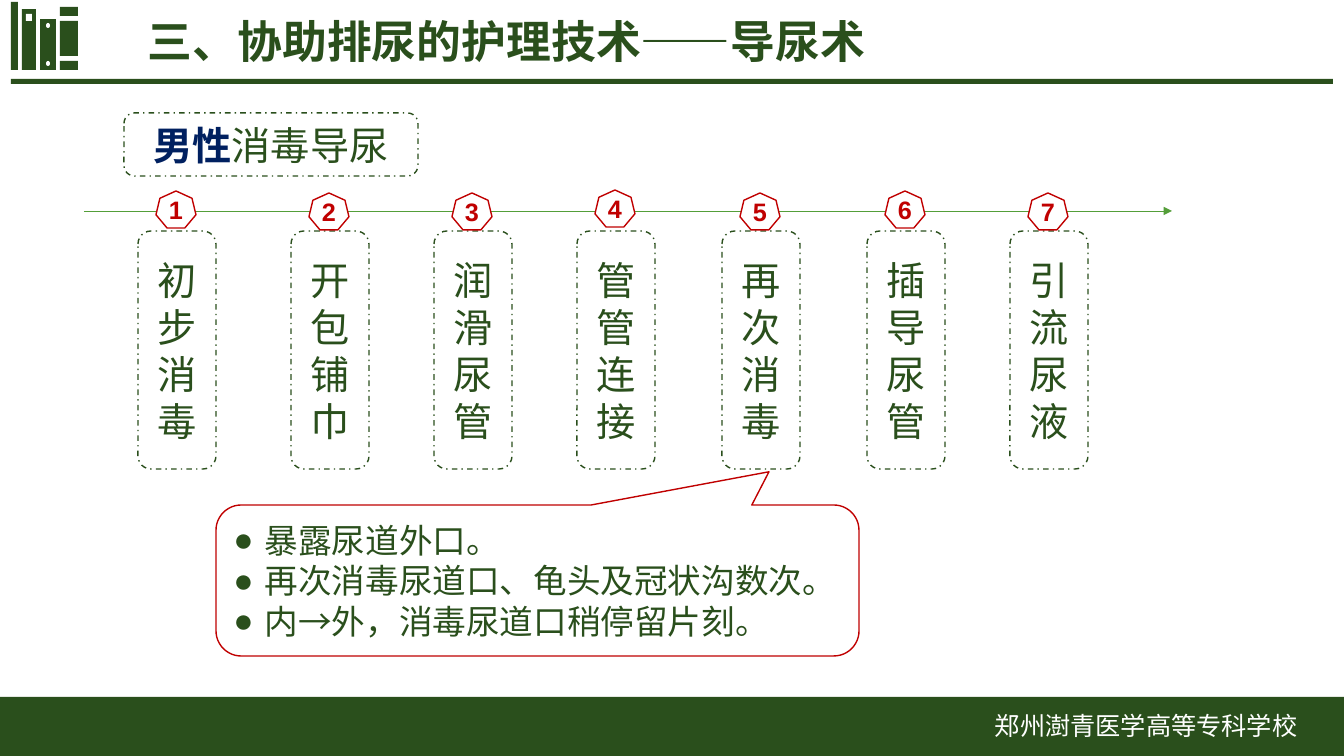
import pptx
import pptx.dml.color
import pptx.enum.dml
import pptx.enum.shapes
import pptx.enum.text
import pptx.oxml
import pptx.oxml.ns
import pptx.util

SHAPE = pptx.enum.shapes.MSO_SHAPE
ALIGN = pptx.enum.text.PP_ALIGN
DASH_DOT = pptx.enum.dml.MSO_LINE.DASH_DOT
EMU_PER_PX = 12192000 / 1344
COLORS = {"green": "2A4F1C", "arrow": "549E39", "red": "C00000",
          "navy": "002060", "white": "FFFFFF"}
CJK = "Noto Sans CJK SC"


def px(n):
    return pptx.util.Emu(round(n * EMU_PER_PX))


def rgb(name):
    return pptx.dml.color.RGBColor.from_string(COLORS[name])


def append_xml(parent, tag, **attrs):
    el = pptx.oxml.parse_xml(f"<a:{tag} {pptx.oxml.ns.nsdecls('a')}/>")
    for key, value in attrs.items():
        el.set(key, value)
    parent.append(el)


def add_text(p, text, size=28, color="green", bold=False, font="Arial"):
    r = p.add_run()
    r.text = text
    r.font.size = pptx.util.Pt(size)
    r.font.bold = bold
    r.font.name = font
    r.font.color.rgb = rgb(color)
    if font == CJK:
        append_xml(r._r.get_or_add_rPr(), "ea", typeface=font)


class Deck:
    def __init__(self):
        self.prs = pptx.Presentation()
        self.prs.slide_width, self.prs.slide_height = px(1344), px(756)
        self.slide = self.prs.slides.add_slide(self.prs.slide_layouts[6])

    def shape(self, kind, x, y, w, h, fill=None, line=None, dash=None):
        sp = self.slide.shapes.add_shape(kind, px(x), px(y), px(w), px(h))
        sp.shadow.inherit = False
        if fill:
            sp.fill.solid()
            sp.fill.fore_color.rgb = rgb(fill)
        else:
            sp.fill.background()
        if line:
            sp.line.color.rgb = rgb(line)
            sp.line.width = pptx.util.Pt(1)
            sp.line.dash_style = dash
        else:
            sp.line.fill.background()
        sp.text_frame.word_wrap = True
        sp.text_frame.vertical_anchor = pptx.enum.text.MSO_ANCHOR.MIDDLE
        sp.text_frame.paragraphs[0].alignment = ALIGN.CENTER
        return sp

    def textbox(self, x, y, w, h, text, **fmt):
        tf = self.slide.shapes.add_textbox(px(x), px(y), px(w), px(h)).text_frame
        tf.word_wrap = True
        add_text(tf.paragraphs[0], text, font=CJK, **fmt)

    def dashed_box(self, x, y, w, h):
        """Add a dash-dot rounded box and return its paragraph."""
        sp = self.shape(SHAPE.ROUNDED_RECTANGLE, x, y, w, h, line="green", dash=DASH_DOT)
        return sp.text_frame.paragraphs[0]

    def arrow(self, x1, x2, y):
        cn = self.slide.shapes.add_connector(
            pptx.enum.shapes.MSO_CONNECTOR.STRAIGHT, px(x1), px(y), px(x2), px(y))
        cn.line.color.rgb = rgb("arrow")
        cn.line.width = pptx.util.Pt(0.5)
        append_xml(cn.line._get_or_add_ln(), "tailEnd", type="triangle")
        append_xml(cn._element.spPr, "effectLst")

    def step(self, number, label, x, badge_y):
        add_text(self.dashed_box(x, 231, 78, 238), label)
        sp = self.shape(SHAPE.HEPTAGON, x + 18, badge_y, 40, 37, fill="white", line="red")
        tf = sp.text_frame
        tf.margin_left = tf.margin_right = tf.margin_top = tf.margin_bottom = 0
        add_text(tf.paragraphs[0], str(number), size=18, color="red", bold=True)

    def callout(self, x, y, w, h, tip, items):
        sp = self.shape(SHAPE.ROUNDED_RECTANGULAR_CALLOUT, x, y, w, h, line="red")
        sp.adjustments[0], sp.adjustments[1] = tip
        tf = sp.text_frame
        for i, item in enumerate(items):
            p = tf.add_paragraph() if i else tf.paragraphs[0]
            p.alignment = ALIGN.LEFT
            pPr = p._p.get_or_add_pPr()
            pPr.set("marL", "285750")
            pPr.set("indent", "-285750")
            append_xml(pPr, "buFont", typeface="Arial")
            append_xml(pPr, "buChar", char="●")
            add_text(p, item, size=24)


def main():
    deck = Deck()
    header_rule = (11, 79, 1322, 5)
    books = [(11, 2, 7, 68), (60, 61, 18, 9), (60, 21, 18, 35), (60, 7, 18, 9),
             (40, 19, 16, 51), (22, 9, 14, 61)]
    footer = (0, 697, 1344, 59)
    for bar in [header_rule, *books, footer]:
        deck.shape(SHAPE.RECTANGLE, *bar, fill="green")
    deck.shape(SHAPE.RECTANGLE, 26, 14, 6, 7, fill="white")
    for hole_y in (23, 61):
        deck.shape(SHAPE.OVAL, 46, hole_y, 4, 5, fill="white")

    deck.textbox(985, 705, 326, 51, "郑州澍青医学高等专科学校", size=18, color="white")
    deck.textbox(138, 9, 922, 64, "三、协助排尿的护理技术——导尿术", size=32, bold=True)

    deck.arrow(84, 1172, 211)
    p = deck.dashed_box(124, 113, 294, 63)
    add_text(p, "男性", color="navy", bold=True)
    add_text(p, "消毒导尿")

    steps = [("初步消毒", 138, 191), ("开包铺巾", 291, 193), ("润滑尿管", 434, 193),
             ("管管连接", 577, 190), ("再次消毒", 722, 193), ("插导尿管", 867, 191),
             ("引流尿液", 1010, 193)]
    for number, (label, x, badge_y) in enumerate(steps, 1):
        deck.step(number, label, x, badge_y)

    deck.callout(216, 505, 643, 151, (0.36, -0.72),
                 ["暴露尿道外口。", "再次消毒尿道口、龟头及冠状沟数次。",
                  "内→外，消毒尿道口稍停留片刻。"])
    deck.prs.save("out.pptx")


if __name__ == "__main__":
    main()
